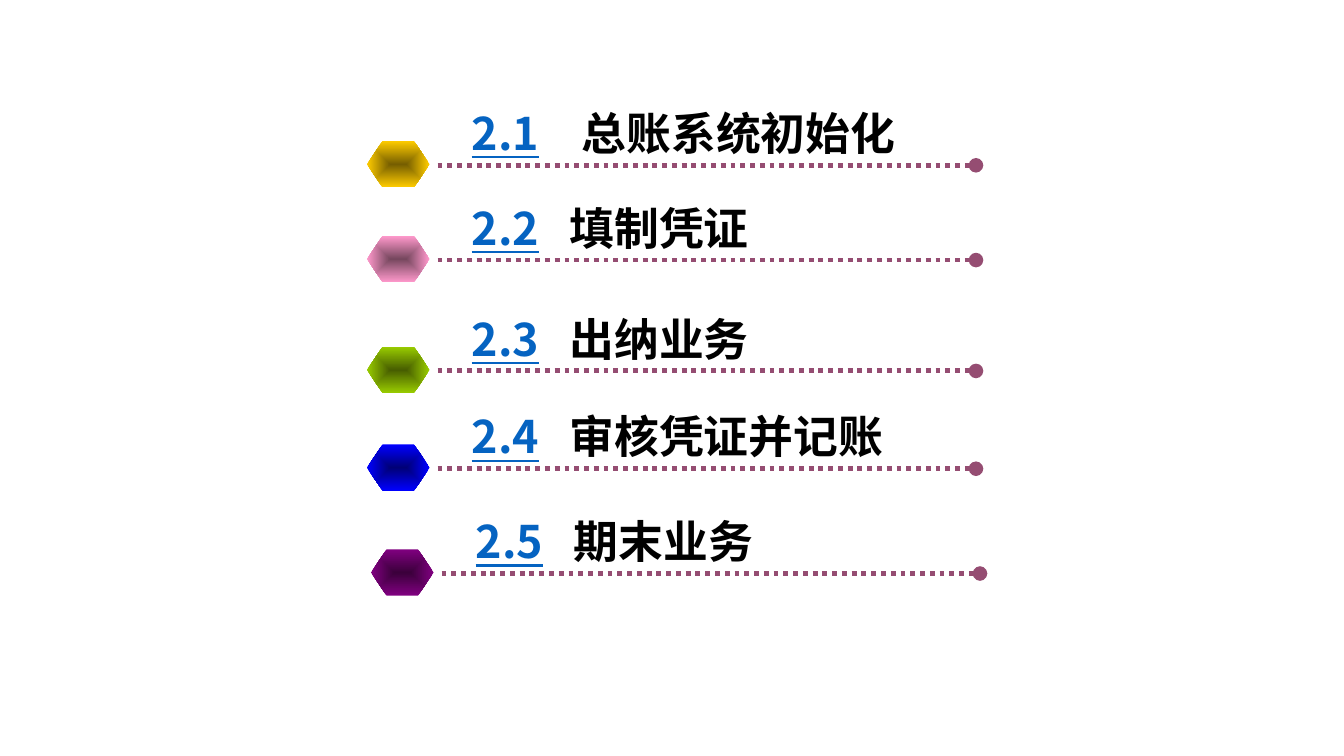
from pptx import Presentation
from pptx.dml.color import RGBColor
from pptx.enum.dml import MSO_LINE
from pptx.enum.shapes import MSO_CONNECTOR, MSO_SHAPE
from pptx.oxml.ns import qn
from pptx.util import Inches, Pt
from lxml.etree import SubElement

SANS, SERIF = "Noto Sans CJK JP", "Times New Roman"
NUMBER_COLOR, TITLE_COLOR, RULE_COLOR = "0563C1", "000000", "954D72"
TITLE_STOP, UNDERLINE_STOP = 0.97, 0.87

# line height, left shift, text width, number, title, title font, tab stops, hexagon centre and edge
CHAPTERS = [
    (1.64, 0, 4.67, "2.1\t", "\t总账系统初始化", SANS, (UNDERLINE_STOP, 1.09), "765E00", "FFCC00"),
    (2.58, 0, 3.11, "2.2", "\t填制凭证", SANS, (TITLE_STOP,), "76475E", "FF99CC"),
    (3.68, 0, 3.11, "2.3", "\t出纳业务", SERIF, (TITLE_STOP,), "475E00", "99CC00"),
    (4.65, 0, 4.45, "2.4", "\t审核凭证并记账", SANS, (TITLE_STOP,), "000076", "0000FF"),
    (5.69, 0.04, 3.11, "2.5\t", "\t期末业务", SERIF, (UNDERLINE_STOP, TITLE_STOP), "3B003B", "800080"),
]


def color(value):
    return RGBColor.from_string(value)


class ContentsPage:
    """Holds the slide, the text style and the group being filled."""

    text_style = {"size": Pt(32), "bold": True}

    def __init__(self, deck):
        self.page = deck.slides.add_slide(deck.slide_layouts[6])
        self.group = None

    def start_group(self):
        self.group = self.page.shapes.add_group_shape().shapes

    def span(self, para, text, font, font_color, underline):
        run = para.add_run()
        run.text = text
        style = {**self.text_style, "name": font, "underline": underline}
        for name, value in style.items():
            setattr(run.font, name, value)
        run.font.color.rgb = color(font_color)
        SubElement(run.font._element, qn("a:ea"), typeface=SANS)

    def heading(self, left, top, width, number, title, title_font, stops):
        box = self.group.add_textbox(Inches(left), Inches(top), Inches(width), Inches(0.64))
        box.text_frame.word_wrap = True
        para = box.text_frame.paragraphs[0]
        tabs = SubElement(para._p.get_or_add_pPr(), qn("a:tabLst"))
        for stop in stops:
            SubElement(tabs, qn("a:tab"), pos=str(int(Inches(stop))), algn="l")
        self.span(para, number, SANS, NUMBER_COLOR, True)
        self.span(para, title, title_font, TITLE_COLOR, False)

    def dotted_rule(self, left, middle, width):
        rule = self.group.add_connector(
            MSO_CONNECTOR.STRAIGHT, Inches(left), Inches(middle), Inches(left + width), Inches(middle))
        rule.line.color.rgb = color(RULE_COLOR)
        rule.line.width = Pt(3.5)
        rule.line.dash_style = MSO_LINE.ROUND_DOT
        SubElement(rule.line._get_or_add_ln(), qn("a:tailEnd"), type="oval")
        SubElement(rule._element.spPr, qn("a:effectLst"))

    def hexagon(self, left, top, centre, edge):
        """Add a hexagon shaded from its centre out to its edge."""
        shape = self.group.add_shape(
            MSO_SHAPE.HEXAGON, Inches(left), Inches(top), Inches(0.62), Inches(0.46))
        shape.adjustments[0] = 0.336
        shape.shadow.inherit = False
        shape.line.fill.background()
        shape.fill.gradient()
        for stop, position, value in zip(shape.fill.gradient_stops, (0, 1), (centre, edge)):
            stop.position = position
            stop.color.rgb = color(value)
        gradient = shape._element.spPr.find(qn("a:gradFill"))
        gradient.remove(gradient.find(qn("a:lin")))
        shading = SubElement(gradient, qn("a:path"), path="shape")
        SubElement(shading, qn("a:fillToRect"), dict.fromkeys("ltrb", "50000"))


def main():
    deck = Presentation()
    deck.slide_width, deck.slide_height = Inches(13.33), Inches(7.5)
    contents = ContentsPage(deck)
    for middle, shift, width, number, title, font, stops, centre, edge in CHAPTERS:
        contents.start_group()
        contents.heading(4.58 + shift, middle - 0.64, width, number, title, font, stops)
        contents.dotted_rule(4.34 + shift, middle, 5.34)
        contents.hexagon(3.64 + shift, middle - 0.24, centre, edge)
    deck.save("out.pptx")


if __name__ == "__main__":
    main()
